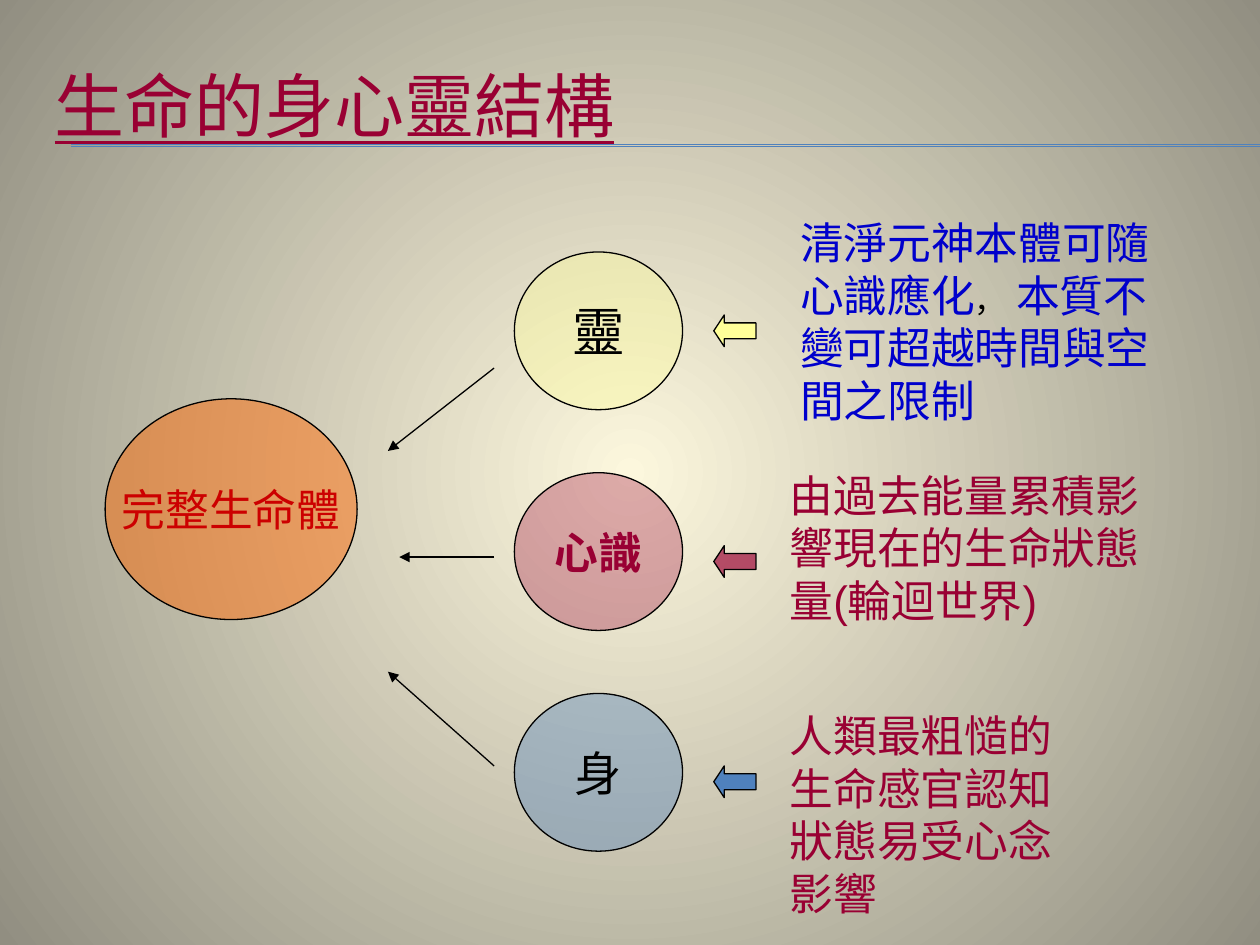
from lxml import etree
from pptx import Presentation
from pptx.dml.color import RGBColor
from pptx.enum.shapes import MSO_CONNECTOR, MSO_SHAPE
from pptx.enum.text import MSO_ANCHOR, MSO_AUTO_SIZE, PP_ALIGN
from pptx.oxml.ns import qn
from pptx.util import Cm, Pt

OVAL, ARROW = MSO_SHAPE.OVAL, MSO_SHAPE.LEFT_ARROW
LINE = MSO_CONNECTOR.STRAIGHT
MIDDLE = MSO_ANCHOR.MIDDLE
LEFT, CENTER = PP_ALIGN.LEFT, PP_ALIGN.CENTER
GROW, FIXED = MSO_AUTO_SIZE.SHAPE_TO_FIT_TEXT, MSO_AUTO_SIZE.NONE

BLACK = RGBColor(0x00, 0x00, 0x00)
BLUE = RGBColor(0x4F, 0x81, 0xBD)
NAVY = RGBColor(0x00, 0x00, 0xCC)
WINE = RGBColor(0x99, 0x00, 0x33)
RED = RGBColor(0xCC, 0x00, 0x00)
ORANGE = RGBColor(0xFF, 0x66, 0x00)
YELLOW = RGBColor(0xFF, 0xFF, 0x99)
CREAM = RGBColor(0xFC, 0xF7, 0xDD)
STONE = RGBColor(0x91, 0x8E, 0x81)

TOP, STEP = 5.08, 4.45
PARTS = [
    ("靈", 30, BLACK, False, YELLOW, 37, 100, 6.35),
    ("心識", 25, WINE, True, WINE, 31, 67, 11),
    ("身", 27, BLACK, False, BLUE, 38, 100, 15.44),
]
NOTES = [
    ((15.88, 4.23, 8.05, 4.5), [
        ("清淨元神本體可隨心識應化", 25, NAVY),
        ("，", 18, BLACK),
        (" 本質不變可超越時間與空間之限制", 25, NAVY)]),
    ((15.67, 9.32, 7.82, 3.43), [
        ("由過去能量累積影響現在的生命狀態量(輪迴世界)", 25, WINE)]),
    ((15.67, 14.17, 6.55, 4.5), [
        ("人類最粗慥的生命感官認知狀態易受心念影響", 25, WINE)]),
]
LINKS = [
    (9.96, 7.42, 7.82, 9.09),
    (9.96, 11.23, 8.05, 11.23),
    (9.96, 15.44, 7.82, 13.54),
]


def place(*sizes):
    return [Cm(size) for size in sizes]


def write(para, text, size=25, color=BLACK, font="Arial", bold=False, under=False):
    run = para.add_run()
    run.text = text
    run.font.size = Pt(size)
    run.font.name = font
    run.font.bold = bold
    run.font.underline = under
    run.font.color.rgb = color


def paint(slide):
    fill = slide.background.fill
    fill.gradient()
    for stop, color, spot in zip(fill.gradient_stops, (CREAM, STONE), (0, 1)):
        stop.color.rgb = color
        stop.position = spot
    grad = slide.element.find(".//" + qn("a:gradFill"))
    grad.remove(grad.find(qn("a:lin")))
    ring = etree.SubElement(grad, qn("a:path"), {"path": "circle"})
    etree.SubElement(ring, qn("a:fillToRect"), dict.fromkeys("ltrb", "50000"))


def add_form(slide, kind, box, fill, alpha=100):
    form = slide.shapes.add_shape(kind, *place(*box))
    form.shadow.inherit = False
    form.fill.solid()
    form.fill.fore_color.rgb = fill
    form.line.color.rgb = BLACK
    form.line.width = Pt(0.75)
    if alpha < 100:
        tone = form.element.spPr.find(qn("a:solidFill"))[0]
        etree.SubElement(tone, qn("a:alpha"), val=str(alpha * 1000))
    return form


def add_disc(slide, box, fill, alpha, text, **style):
    frame = add_form(slide, OVAL, box, fill, alpha).text_frame
    frame.word_wrap = False
    frame.vertical_anchor = MIDDLE
    para = frame.paragraphs[0]
    para.alignment = CENTER
    write(para, text, **style)


def add_mark(slide, top, fill, alpha):
    mark = add_form(slide, ARROW, (14.39, top, 0.85, 0.64), fill, alpha)
    mark.adjustments[0] = 0.5
    mark.adjustments[1] = 0.33


def add_note(slide, box, runs):
    frame = slide.shapes.add_textbox(*place(*box)).text_frame
    frame.word_wrap = True
    frame.auto_size = GROW
    for text, size, color in runs:
        write(frame.paragraphs[0], text, size=size, color=color)


def add_line(slide, ends, color, head=False):
    line = slide.shapes.add_connector(LINE, *place(*ends))
    line.line.color.rgb = color
    line.line.width = Pt(0.75)
    frame = line.element.spPr
    if head:
        etree.SubElement(frame.find(qn("a:ln")), qn("a:tailEnd"), type="triangle")
    etree.SubElement(frame, qn("a:effectLst"))


def add_title(slide, text):
    title = slide.shapes.title
    title.left, title.top, title.width, title.height = place(0.85, 0.6, 24.13, 3)
    frame = title.text_frame
    frame.vertical_anchor = MIDDLE
    frame.auto_size = FIXED
    para = frame.paragraphs[0]
    para.alignment = LEFT
    write(para, text, size=40, color=WINE, font="Calibri", under=True)


def main():
    deck = Presentation()
    deck.slide_width, deck.slide_height = place(25.4, 19.05)
    slide = deck.slides.add_slide(deck.slide_layouts[5])
    paint(slide)
    for top in (2.92, 2.95):
        add_line(slide, (1.43, top, 25.4, top), BLUE)
    add_title(slide, "生命的身心靈結構")
    for row, (text, size, ink, bold, fill, alpha, tint, top) in enumerate(PARTS):
        box = (10.37, TOP + row * STEP, 3.39, 3.18)
        add_disc(slide, box, fill, alpha, text, size=size, color=ink, bold=bold)
        add_mark(slide, top, fill, tint)
    for box, runs in NOTES:
        add_note(slide, box, runs)
    add_disc(slide, (2.12, 8.04, 5.08, 4.45), ORANGE, 47, "完整生命體", color=RED)
    for ends in LINKS:
        add_line(slide, ends, BLACK, head=True)
    deck.save("out.pptx")


if __name__ == "__main__":
    main()
